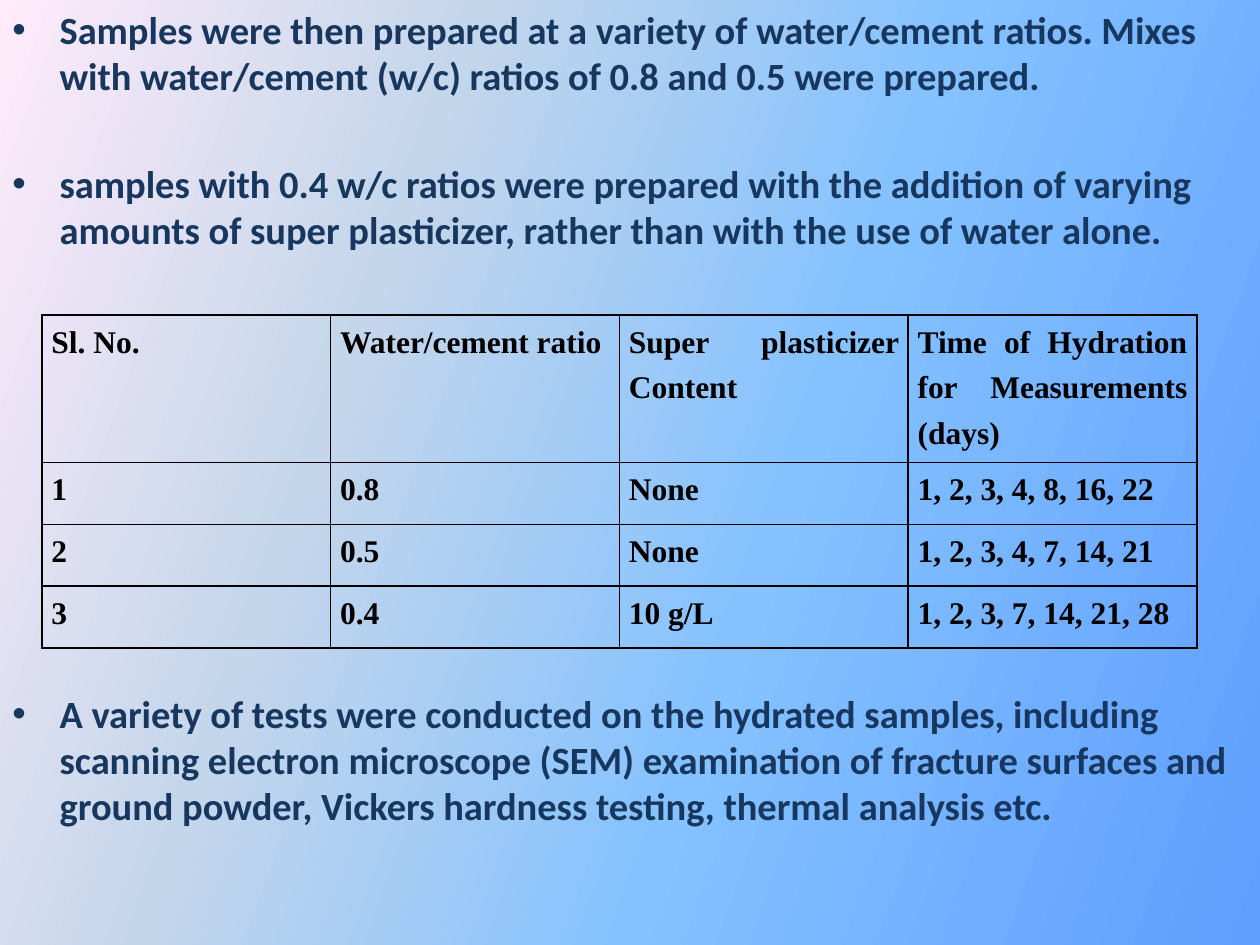
"""Build the slide on cement sample preparation and water/cement ratios."""
from dataclasses import dataclass

from lxml.etree import SubElement
from pptx import Presentation
from pptx.dml.color import RGBColor as Color
from pptx.enum.text import PP_ALIGN as Align
from pptx.oxml.ns import qn
from pptx.slide import Slide
from pptx.util import Pt


@dataclass(frozen=True)
class Theme:
    body_font: str = "Calibri"
    body_size: float = 22
    body_color: str = "17375E"
    table_font: str = "Times New Roman"
    table_size: float = 18
    table_color: str = "000000"
    border_width: float = 1
    gradient_angle: float = 160
    gradient: tuple = ((0, "5E9EFF"), (40, "85C2FF"), (70, "C4D6EB"), (100, "FFEBFA"))


@dataclass(frozen=True)
class Bullet:
    text: str
    space_before: float


@dataclass(frozen=True)
class Grid:
    left: float
    top: float
    column_width: float
    row_heights: tuple
    rows: tuple


THEME = Theme()
PAGE_WIDTH, PAGE_HEIGHT = 720, 540
HANGING = 27

BULLETS = (
    Bullet("Samples were then prepared at a variety of water/cement ratios. Mixes with "
           "water/cement (w/c) ratios of 0.8 and 0.5 were prepared.", 0),
    Bullet("samples with 0.4 w/c ratios were prepared with the addition of varying amounts "
           "of super plasticizer, rather than with the use of water alone.", 35),
    Bullet("A variety of tests were conducted on the hydrated samples, including scanning "
           "electron microscope (SEM) examination of fracture surfaces and ground powder, "
           "Vickers hardness testing, thermal analysis etc.", 250),
)

MIXES = Grid(24, 180, 165, (71.5, 35.4, 35.4, 35.4), (
    ("Sl. No.", "Water/cement ratio", "Super plasticizer Content",
     "Time of Hydration for Measurements (days)"),
    ("1", "0.8", "None", "1, 2, 3, 4, 8, 16, 22"),
    ("2", "0.5", "None", "1, 2, 3, 4, 7, 14, 21"),
    ("3", "0.4", "10 g/L", "1, 2, 3, 7, 14, 21, 28"),
))


def apply_format(target, values: dict) -> None:
    """Set each named attribute on the target."""
    for name, value in values.items():
        setattr(target, name, value)


def add_span(para, text: str, font: str, size: float, color: str) -> None:
    """Add one bold run of text to a paragraph."""
    span = para.add_run()
    span.text = text
    apply_format(span.font, {"name": font, "size": Pt(size), "bold": True})
    span.font.color.rgb = Color.from_string(color)


def add_solid_fill(parent, color: str) -> None:
    """Append a solid fill to a drawing element."""
    fill = SubElement(parent, qn("a:solidFill"))
    SubElement(fill, qn("a:srgbClr"), val=color)


def paint_background(page: Slide) -> None:
    """Fill the page with the theme gradient."""
    fill = page.background.fill
    fill.gradient()
    fill.gradient_angle = THEME.gradient_angle
    stops = next(page.background._cSld.iter(qn("a:gsLst")))
    for stop in list(stops):
        stops.remove(stop)
    for position, color in THEME.gradient:
        stop = SubElement(stops, qn("a:gs"), pos=str(position * 1000))
        SubElement(stop, qn("a:srgbClr"), val=color)


def add_bullets(page: Slide, bullets: tuple[Bullet, ...]) -> None:
    """Write the bulleted paragraphs over the whole page."""
    box = page.shapes.add_textbox(0, 0, Pt(PAGE_WIDTH), Pt(PAGE_HEIGHT))
    frame = box.text_frame
    frame.word_wrap = True
    for index, bullet in enumerate(bullets):
        para = frame.add_paragraph() if index else frame.paragraphs[0]
        para.space_before = Pt(bullet.space_before)
        add_span(para, bullet.text, THEME.body_font, THEME.body_size, THEME.body_color)
        properties = para._p.get_or_add_pPr()
        properties.set("marL", str(Pt(HANGING)))
        properties.set("indent", str(-Pt(HANGING)))
        SubElement(properties, qn("a:buFont"), typeface="Arial")
        SubElement(properties, qn("a:buChar"), char="•")


def style_cell(cell, text: str) -> None:
    """Write one transparent, bordered table cell."""
    apply_format(cell, {"margin_left": Pt(5.4), "margin_right": Pt(5.4),
                        "margin_top": 0, "margin_bottom": 0})
    para = cell.text_frame.paragraphs[0]
    apply_format(para, {"alignment": Align.JUSTIFY, "line_spacing": 1.3})
    add_span(para, text, THEME.table_font, THEME.table_size, THEME.table_color)
    properties = cell._tc.get_or_add_tcPr()
    for side in ("lnL", "lnR", "lnT", "lnB"):
        line = SubElement(properties, qn(f"a:{side}"), w=str(Pt(THEME.border_width)))
        add_solid_fill(line, THEME.table_color)
    cell.fill.background()


def add_grid(page: Slide, grid: Grid) -> None:
    """Draw the table described by the grid."""
    columns = len(grid.rows[0])
    table = page.shapes.add_table(
        len(grid.rows), columns, Pt(grid.left), Pt(grid.top),
        Pt(grid.column_width * columns), Pt(sum(grid.row_heights))).table
    apply_format(table, {"first_row": False, "horz_banding": False})
    for column in table.columns:
        column.width = Pt(grid.column_width)
    for row, height, texts in zip(table.rows, grid.row_heights, grid.rows):
        row.height = Pt(height)
        for cell, text in zip(row.cells, texts):
            style_cell(cell, text)


def main() -> None:
    """Build and save the deck."""
    deck = Presentation()
    apply_format(deck, {"slide_width": Pt(PAGE_WIDTH), "slide_height": Pt(PAGE_HEIGHT)})
    page = deck.slides.add_slide(deck.slide_layouts[6])
    paint_background(page)
    add_bullets(page, BULLETS)
    add_grid(page, MIXES)
    deck.save("out.pptx")


if __name__ == "__main__":
    main()
